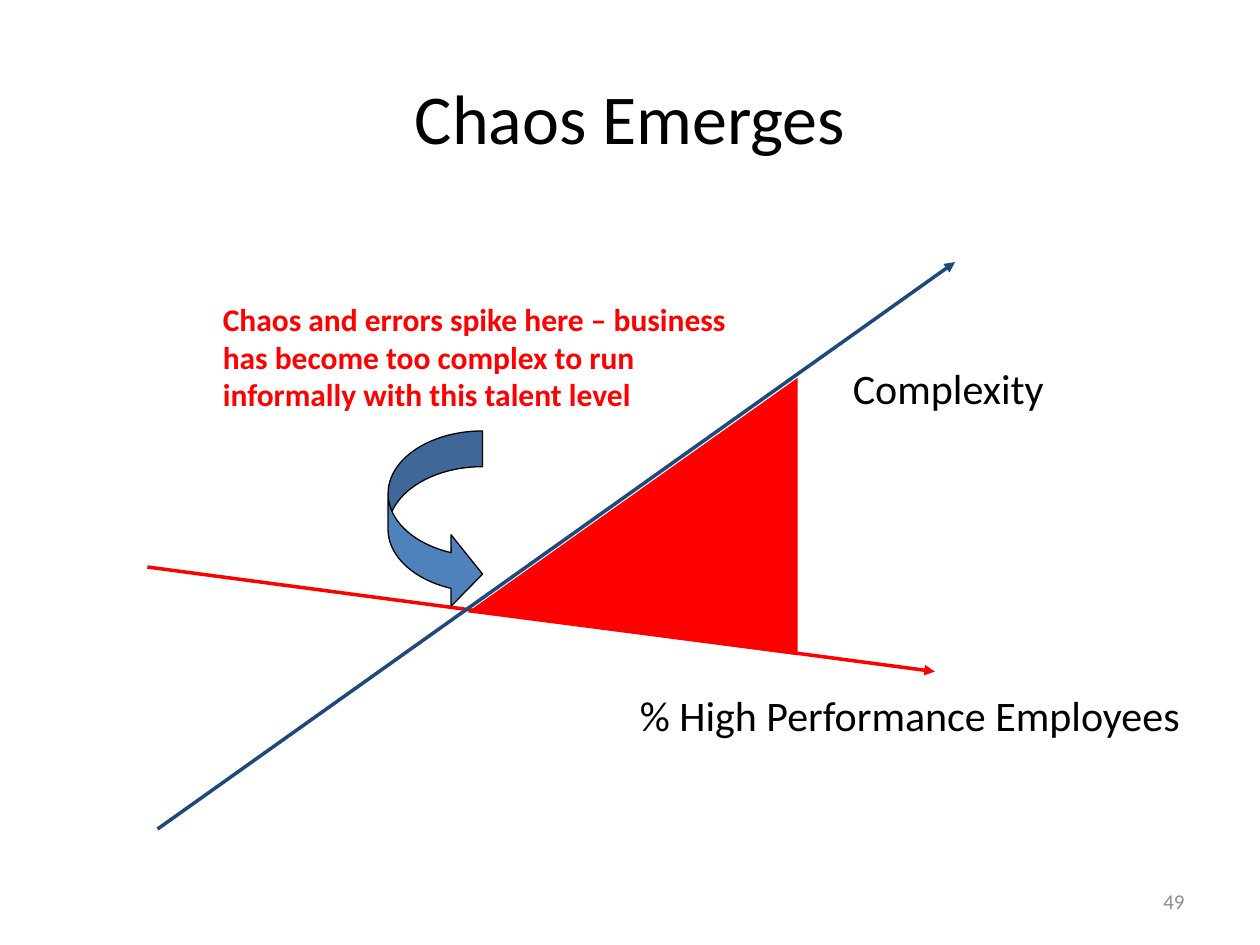
from dataclasses import dataclass

from lxml.etree import SubElement
from pptx import Presentation
from pptx.dml.color import RGBColor
from pptx.enum.shapes import MSO_CONNECTOR, MSO_SHAPE
from pptx.enum.text import MSO_ANCHOR, MSO_AUTO_SIZE, PP_ALIGN
from pptx.oxml.ns import qn
from pptx.util import Inches, Pt

FONT = "Calibri"
COLORS = {
    "text": "000000",
    "red": "FF0000",
    "navy": "1F497D",
    "blue": "4F81BD",
    "gray": "8C8C8C",
}


@dataclass
class Label:
    text: str
    box: tuple[float, float, float, float]
    size: float = 24
    color: str = "text"
    bold: bool = False


@dataclass
class Trend:
    start: tuple[float, float]
    end: tuple[float, float]
    color: str


EMPLOYEES_TREND = Trend((1.17, 4.5), (7.42, 5.33), "red")
COMPLEXITY_TREND = Trend((1.25, 6.58), (7.58, 2.08), "navy")
CHAOS_AREA = [(3.71, 4.86), (6.33, 3), (6.33, 5.2)]
LABELS = [
    Label("% High Performance Employees", (4.98, 5.42, 5.02, 0.5)),
    Label(
        "Chaos and errors spike here – business\n"
        "has become too complex to run\n"
        "informally with this talent level",
        (1.67, 2.33, 4.32, 1.01), 18, "red", True,
    ),
    Label("Complexity", (6.67, 2.83, 1.85, 0.5)),
]
PAGE_NUMBER = Label("49", (7.17, 6.95, 2.33, 0.4), 12, "gray")


def color(name: str) -> RGBColor:
    return RGBColor.from_string(COLORS[name])


def write(shape, label: Label, alignment=PP_ALIGN.LEFT) -> None:
    paragraph = shape.text_frame.paragraphs[0]
    paragraph.text = label.text
    paragraph.alignment = alignment
    paragraph.font.name = FONT
    paragraph.font.size = Pt(label.size)
    paragraph.font.bold = label.bold
    paragraph.font.color.rgb = color(label.color)


def add_label(slide, label: Label) -> None:
    shape = slide.shapes.add_textbox(*map(Inches, label.box))
    shape.text_frame.word_wrap = False
    shape.text_frame.auto_size = MSO_AUTO_SIZE.SHAPE_TO_FIT_TEXT
    write(shape, label)


def add_trend(slide, trend: Trend) -> None:
    connector = slide.shapes.add_connector(
        MSO_CONNECTOR.STRAIGHT, *map(Inches, trend.start + trend.end))
    connector.line.color.rgb = color(trend.color)
    connector.line.width = Pt(2)
    SubElement(connector.line._get_or_add_ln(), qn("a:tailEnd"), type="triangle")
    SubElement(connector._element.spPr, qn("a:effectLst"))


def add_curved_arrow(slide) -> None:
    arrow = slide.shapes.add_shape(
        MSO_SHAPE.CURVED_RIGHT_ARROW, *map(Inches, (3.08, 3.42, 0.75, 1.42)))
    for index, value in enumerate((0.378, 0.756, 0.333)):
        arrow.adjustments[index] = value
    arrow.shadow.inherit = False
    arrow.fill.solid()
    arrow.fill.fore_color.rgb = color("blue")
    arrow.line.color.rgb = color("text")
    arrow.line.width = Pt(0.75)


def add_chaos_area(slide) -> None:
    first, *others = [(Inches(x), Inches(y)) for x, y in CHAOS_AREA]
    builder = slide.shapes.build_freeform(*first)
    builder.add_line_segments(others, close=True)
    area = builder.convert_to_shape()
    area.shadow.inherit = False
    area.fill.solid()
    area.fill.fore_color.rgb = color("red")
    area.line.fill.background()


def main() -> None:
    presentation = Presentation()
    presentation.slide_width = Inches(10)
    presentation.slide_height = Inches(7.5)
    slide = presentation.slides.add_slide(presentation.slide_layouts[5])

    # Title
    title = slide.shapes.title
    title.left, title.top, title.width, title.height = map(Inches, (0.5, 0.3, 9, 1.25))
    title.text_frame.vertical_anchor = MSO_ANCHOR.MIDDLE
    write(title, Label("Chaos Emerges", (0.5, 0.3, 9, 1.25), 40), PP_ALIGN.CENTER)

    # Crossing trends and the area between them
    add_trend(slide, EMPLOYEES_TREND)
    add_trend(slide, COMPLEXITY_TREND)
    add_curved_arrow(slide)
    add_chaos_area(slide)

    # Labels
    for label in LABELS:
        add_label(slide, label)

    # Page number
    number = slide.shapes.add_textbox(*map(Inches, PAGE_NUMBER.box))
    number.text_frame.word_wrap = True
    number.text_frame.vertical_anchor = MSO_ANCHOR.MIDDLE
    write(number, PAGE_NUMBER, PP_ALIGN.RIGHT)

    presentation.save("out.pptx")


if __name__ == "__main__":
    main()
